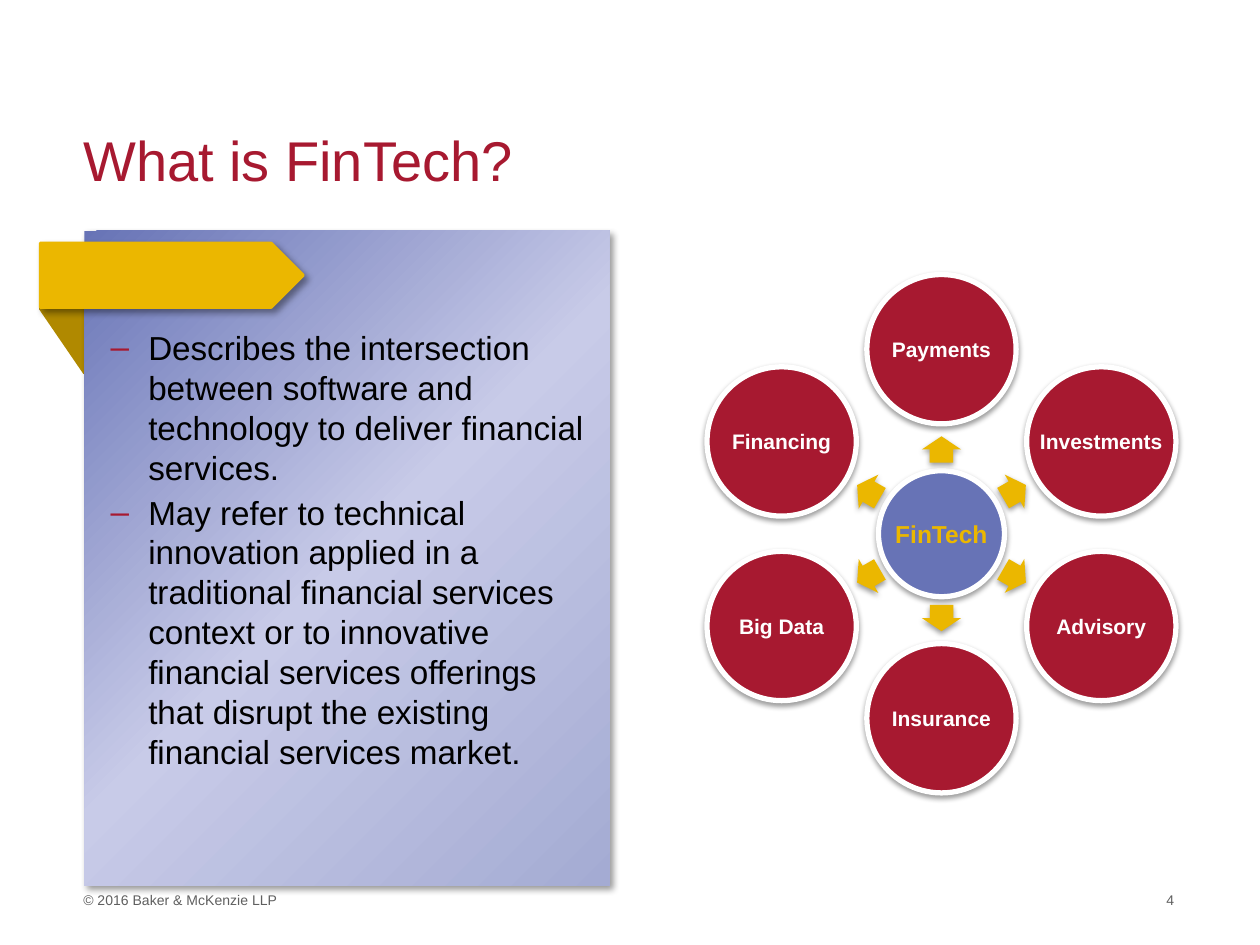
import math

import copy
import lxml.etree
import pptx
import pptx.dml.color
import pptx.enum.shapes
import pptx.enum.text
import pptx.oxml
import pptx.oxml.ns
import pptx.util

Cm, Pt = pptx.util.Cm, pptx.util.Pt
SHAPE = pptx.enum.shapes.MSO_SHAPE
ALIGN = pptx.enum.text.PP_ALIGN
ANCHOR = pptx.enum.text.MSO_ANCHOR
qn = pptx.oxml.ns.qn

# Content
TITLE = "What is FinTech?"
FOOTER = "© 2016 Baker & McKenzie LLP"
PAGE_NUMBER = "4"
DEFINITIONS = [
    "Describes the intersection between software and technology to deliver "
    "financial services.",
    "May refer to technical innovation applied in a traditional financial "
    "services context or to innovative financial services offerings that "
    "disrupt the existing financial services market.",
]
HUB = "FinTech"
FIELDS = ["Payments", "Investments", "Advisory", "Insurance", "Big Data", "Financing"]

COLORS = {
    "red": "A71930", "gold": "EBB700", "fold": "B08900", "blue": "6773B6",
    "pale": "C8CBE8", "mist": "A4ABD3", "grey": "5F5F5F",
    "white": "FFFFFF", "black": "000000",
}
# Shadow settings: opacity %, blur pt, distance pt, direction in degrees
SOFT = (38, 3.1, 1.6, 90)
DEEP = (40, 4, 3, 45)

# Wheel geometry in cm
CENTER_X, CENTER_Y = 18.98, 10.76
FIELD_RING, ARROW_RING = 3.72, 1.7
HUB_SIZE, FIELD_SIZE = 2.54, 3.01
ARROW_LENGTH, ARROW_WIDTH = 0.53, 0.79


def rgb(name):
    return pptx.dml.color.RGBColor.from_string(COLORS[name])


def style_text(paragraph, size, color, bold=False):
    font = paragraph.font
    font.name, font.size, font.bold = "Arial", Pt(size), bold
    font.color.rgb = rgb(color)


def add_shadow(shape, opacity, blur, distance, direction):
    effects = shape._element.spPr.find(qn("a:effectLst"))
    shadow = lxml.etree.SubElement(
        effects, qn("a:outerShdw"), blurRad=str(Pt(blur)), dist=str(Pt(distance)),
        dir=str(direction * 60000), rotWithShape="0")
    tint = lxml.etree.SubElement(shadow, qn("a:srgbClr"), val=COLORS["black"])
    lxml.etree.SubElement(tint, qn("a:alpha"), val=str(opacity * 1000))


def add_part(parts, kind, box, fill=None, line=None, line_width=1.5, shadow=None):
    shape = parts.add_shape(kind, *map(Cm, box))
    shape.shadow.inherit = False
    if fill:
        shape.fill.solid()
        shape.fill.fore_color.rgb = rgb(fill)
    if line:
        shape.line.color.rgb = rgb(line)
        shape.line.width = Pt(line_width)
    else:
        shape.line.fill.background()
    if shadow:
        add_shadow(shape, *shadow)
    return shape


def set_margins(frame, side=0):
    frame.margin_left = frame.margin_right = Cm(side)
    frame.margin_top = frame.margin_bottom = 0


def add_text(slide, box, text, size, color, align=ALIGN.LEFT, anchor=ANCHOR.TOP):
    frame = slide.shapes.add_textbox(*map(Cm, box)).text_frame
    frame.word_wrap = True
    frame.vertical_anchor = anchor
    set_margins(frame)
    frame.text = text
    frame.paragraphs[0].alignment = align
    style_text(frame.paragraphs[0], size, color)


def centered(x, y, width, height):
    return x - width / 2, y - height / 2, width, height


def on_ring(radius, degrees):
    angle = math.radians(degrees)
    return CENTER_X + radius * math.cos(angle), CENTER_Y + radius * math.sin(angle)


def add_circle(wheel, center, diameter, label, fill, size, color):
    circle = add_part(wheel, SHAPE.OVAL, centered(*center, diameter, diameter),
                      fill, "white", 3, SOFT)
    frame = circle.text_frame
    frame.word_wrap = False
    frame.vertical_anchor = ANCHOR.MIDDLE
    set_margins(frame)
    frame.text = label
    frame.paragraphs[0].alignment = ALIGN.CENTER
    style_text(frame.paragraphs[0], size, color, bold=True)


def add_wheel(slide):
    wheel = slide.shapes.add_group_shape().shapes
    add_circle(wheel, (CENTER_X, CENTER_Y), HUB_SIZE, HUB, "blue", 14, "gold")
    for index, field in enumerate(FIELDS):
        degrees = index * 360 / len(FIELDS) - 90
        arrow_box = centered(*on_ring(ARROW_RING, degrees), ARROW_LENGTH, ARROW_WIDTH)
        arrow = add_part(wheel, SHAPE.RIGHT_ARROW, arrow_box, "gold", shadow=SOFT)
        arrow.adjustments[0], arrow.adjustments[1] = 0.6, 0.5
        arrow.rotation = degrees % 360
        add_circle(wheel, on_ring(FIELD_RING, degrees), FIELD_SIZE, field,
                   "red", 12, "white")


def add_card(slide):
    card = slide.shapes.add_group_shape().shapes
    fold = add_part(card, SHAPE.RIGHT_TRIANGLE, (0.81, 6.22, 0.89, 1.3), "fold", "fold")
    fold.rotation = 180

    panel = add_part(card, SHAPE.RECTANGLE, (1.7, 4.65, 10.59, 13.21), shadow=DEEP)
    panel.fill.gradient()
    panel.fill.gradient_angle = 315
    stop_list = panel._element.spPr.find(qn("a:gradFill")).find(qn("a:gsLst"))
    stop_list.append(copy.deepcopy(stop_list[0]))
    for stop, position, name in zip(panel.fill.gradient_stops, (0, 0.5, 1),
                                    ("blue", "pale", "mist")):
        stop.position = position
        stop.color.rgb = rgb(name)

    add_part(card, SHAPE.PENTAGON, (0.81, 4.9, 5.31, 1.3), "gold", "gold", shadow=DEEP)


def add_definitions(slide):
    frame = slide.shapes.add_textbox(Cm(1.73), Cm(6.6), Cm(10.59), Cm(10.4)).text_frame
    frame.word_wrap = True
    set_margins(frame, 0.5)
    frame.text = "\n".join(DEFINITIONS)
    for index, paragraph in enumerate(frame.paragraphs):
        paragraph.line_spacing = Pt(22.75)
        if index:
            paragraph.space_before = Pt(3)
        properties = paragraph._p.get_or_add_pPr()
        properties.set("marL", str(Cm(0.76)))
        properties.set("indent", str(-Cm(0.76)))
        bullet_color = lxml.etree.SubElement(properties, qn("a:buClr"))
        lxml.etree.SubElement(bullet_color, qn("a:srgbClr"), val=COLORS["red"])
        lxml.etree.SubElement(properties, qn("a:buFont"), typeface="Arial")
        lxml.etree.SubElement(properties, qn("a:buChar"), char="‒")
        style_text(paragraph, 19, "black")


def main():
    deck = pptx.Presentation()
    deck.slide_width, deck.slide_height = Cm(25.4), Cm(19.05)
    slide = deck.slides.add_slide(deck.slide_layouts[6])

    # Footer and title
    add_text(slide, (1.68, 17.98, 19.99, 0.33), FOOTER, 8, "grey")
    add_text(slide, (21.79, 17.98, 1.88, 0.51), PAGE_NUMBER, 8, "grey", ALIGN.RIGHT)
    add_text(slide, (1.68, 2.51, 22, 1.37), TITLE, 32, "red", anchor=ANCHOR.BOTTOM)

    # Wheel of fields, then the definition card
    add_wheel(slide)
    add_card(slide)
    add_definitions(slide)
    deck.save("out.pptx")


if __name__ == "__main__":
    main()
